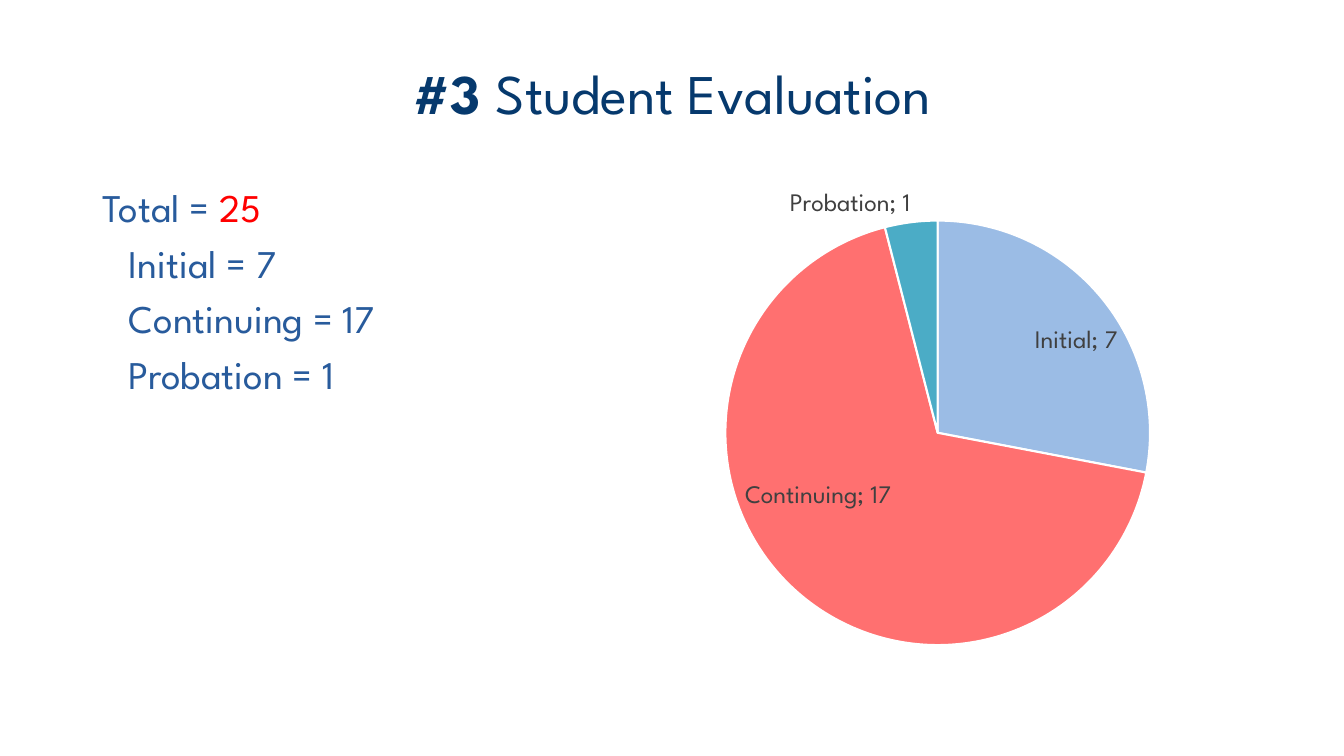
import pptx
import pptx.chart.data
import pptx.dml.color
import pptx.enum.chart
import pptx.enum.text
import pptx.util
from pptx.util import Inches
from lxml import etree

FONT = "League Spartan"
BLUE = "285B9C"


def color(value):
    return pptx.dml.color.RGBColor.from_string(value)


deck = pptx.Presentation()
deck.slide_width, deck.slide_height = Inches(13.33), Inches(7.5)
slide = deck.slides.add_slide(deck.slide_layouts[6])

# Title
title = slide.shapes.add_textbox(Inches(0.67), Inches(0.47), Inches(12), Inches(0.88)).text_frame
title.word_wrap = True
title.vertical_anchor = pptx.enum.text.MSO_ANCHOR.MIDDLE
heading = title.paragraphs[0]
heading.alignment = pptx.enum.text.PP_ALIGN.CENTER
for words, bold in [("#3 ", True), ("Student Evaluation", False)]:
    run = heading.add_run()
    run.text = words
    run.font.bold = bold
    run.font.name = FONT
    run.font.size = pptx.util.Pt(40)
    run.font.color.rgb = color("06396D")

# Totals, with the categories indented below
counts = {"Initial": 7, "Continuing": 17, "Probation": 1}
totals = slide.shapes.add_textbox(Inches(0.67), Inches(1.77), Inches(4.9), Inches(4.68)).text_frame
totals.word_wrap = True
rows = [("Total", sum(counts.values()), "FF0000", 0.25)]
rows += [(name, count, BLUE, 0.51) for name, count in counts.items()]
for index, (name, count, count_color, indent) in enumerate(rows):
    line = totals.add_paragraph() if index else totals.paragraphs[0]
    line._p.get_or_add_pPr().set("marL", str(Inches(indent)))
    line.space_before = pptx.util.Pt(6 if index else 0)
    for words, shade in [(f"{name} = ", BLUE), (str(count), count_color)]:
        run = line.add_run()
        run.text = words
        run.font.name = FONT
        run.font.size = pptx.util.Pt(28)
        run.font.color.rgb = color(shade)

# Pie of the categories
evaluation = pptx.chart.data.CategoryChartData()
evaluation.categories = list(counts)
evaluation.add_series("Series 1", list(counts.values()))
pie = slide.shapes.add_chart(
    pptx.enum.chart.XL_CHART_TYPE.PIE,
    Inches(5.65), Inches(1.74), Inches(7.02), Inches(4.82), evaluation).chart
pie.has_title = False
pie.has_legend = False
pie.font.name = FONT
pie.font.size = pptx.util.Pt(18)
pie.font.color.rgb = color("404040")
plot = pie.plots[0]
plot.vary_by_categories = True
for index, fill in enumerate(["9BBCE5", "FF7070", "4BACC6"]):
    wedge = plot.series[0].points[index].format
    wedge.fill.solid()
    wedge.fill.fore_color.rgb = color(fill)
    wedge.line.color.rgb = color("FFFFFF")
    wedge.line.width = pptx.util.Pt(1.5)

# Labels with category and value
labels = plot.series[0].data_labels
labels.show_category_name = True
labels.show_value = True
labels.show_percentage = False
labels.show_legend_key = False
labels.position = pptx.enum.chart.XL_LABEL_POSITION.BEST_FIT
labels.font.name = FONT
labels.font.size = pptx.util.Pt(18)
labels.font.color.rgb = color("404040")

# Place of the pie within its frame
C = "http://schemas.openxmlformats.org/drawingml/2006/chart"
plot_area = pie._chartSpace.chart.plotArea
for old in plot_area.findall(f"{{{C}}}layout"):
    plot_area.remove(old)
layout = etree.Element(f"{{{C}}}layout")
manual = etree.SubElement(layout, f"{{{C}}}manualLayout")
for tag, value in [("layoutTarget", "inner"), ("xMode", "edge"), ("yMode", "edge"),
                   ("x", "0.22"), ("y", "0.09"), ("w", "0.6"), ("h", "0.88")]:
    etree.SubElement(manual, f"{{{C}}}{tag}").set("val", value)
plot_area.insert(0, layout)

deck.save("out.pptx")
